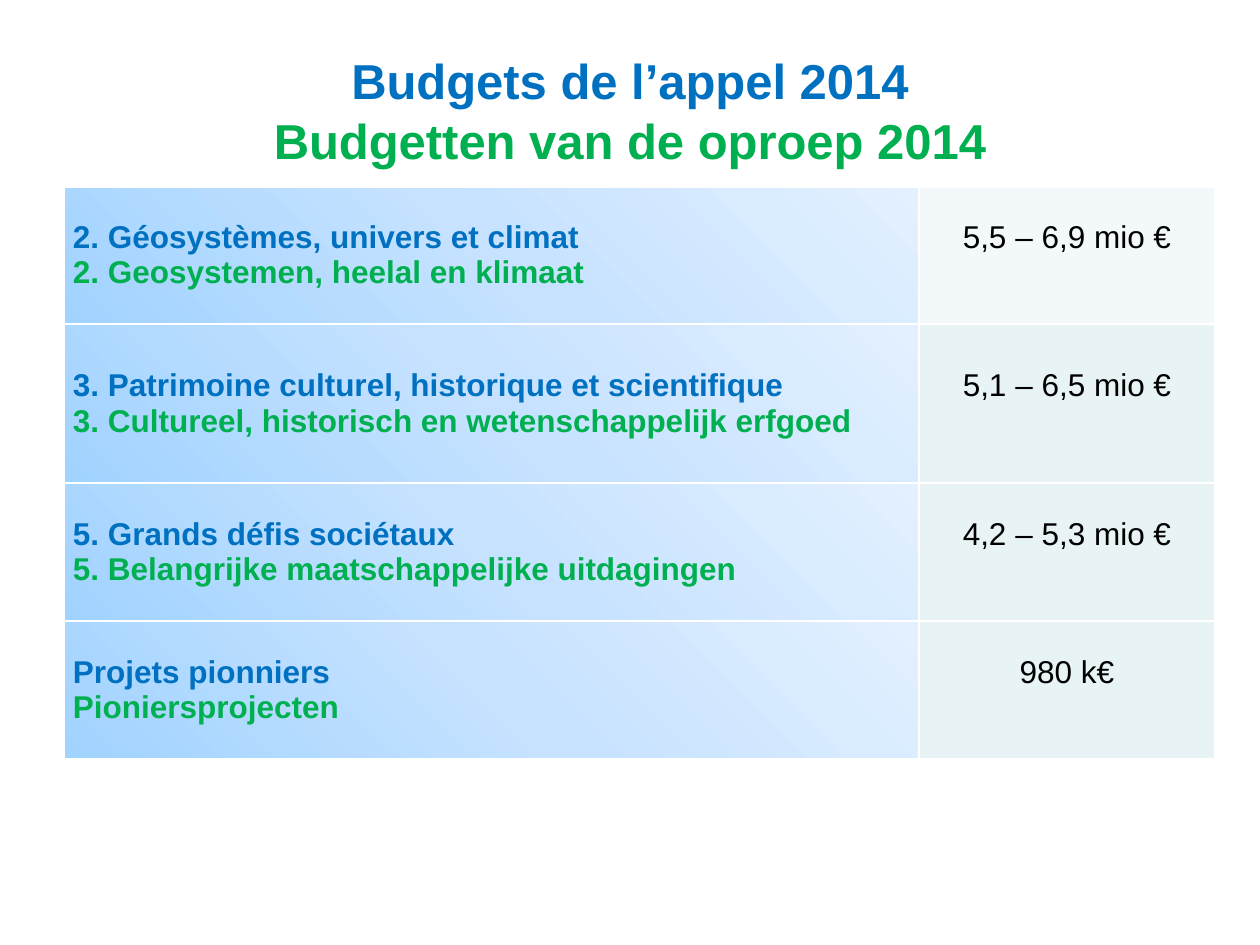
from copy import deepcopy

from lxml.etree import SubElement
from pptx import Presentation
from pptx.dml.color import RGBColor
from pptx.enum.text import MSO_ANCHOR, PP_ALIGN
from pptx.oxml.ns import qn
from pptx.util import Emu, Pt

COLORS = {
    "french": "0070C0", "dutch": "00B050", "amount": "000000",
    "border": "FFFFFF", "first_amount": "F3F9FA", "other_amount": "E7F3F4",
}
THEME_GRADIENT = [(0, "A1D3FF"), (0.5, "C6E2FF"), (1, "E3F0FF")]
BUDGETS = [
    ("2. Géosystèmes, univers et climat",
     "2. Geosystemen, heelal en klimaat", "5,5 – 6,9 mio €"),
    ("3. Patrimoine culturel, historique et scientifique",
     "3. Cultureel, historisch en wetenschappelijk erfgoed", "5,1 – 6,5 mio €"),
    ("5. Grands défis sociétaux",
     "5. Belangrijke maatschappelijke uitdagingen", "4,2 – 5,3 mio €"),
    ("Projets pionniers", "Pioniersprojecten", "980 k€"),
]
LINE_HEIGHT = 35


def px(length):
    return Emu(round(length * 914400 / 126))


def write(frame, lines, size=18, bold=True, align=PP_ALIGN.LEFT, gap=0):
    """Write (text, colour name) pairs as one paragraph each."""
    for index, (text, color) in enumerate(lines):
        para = frame.paragraphs[0] if index == 0 else frame.add_paragraph()
        para.alignment = align
        if index and gap:
            para.space_before = Pt(gap)
        span = para.add_run()
        span.text = text
        span.font.name = "Arial"
        span.font.size = Pt(size)
        span.font.bold = bold
        span.font.color.rgb = RGBColor.from_string(COLORS[color])


def add_title(page, left, top, width, height):
    box = page.shapes.add_textbox(px(left), px(top), px(width), px(height))
    frame = box.text_frame
    frame.word_wrap = True
    frame.vertical_anchor = MSO_ANCHOR.TOP
    frame.margin_top = px(12)
    write(frame, [("Budgets de l’appel 2014", "french"),
                  ("Budgetten van de oproep 2014", "dutch")],
          size=28, align=PP_ALIGN.CENTER, gap=1)


def add_borders(cell, top_width):
    """Add the border lines; call before the fill, which must follow them."""
    properties = cell._tc.get_or_add_tcPr()
    for side, width in (("L", 1), ("R", 1), ("T", top_width), ("B", 1)):
        line = SubElement(properties, qn(f"a:ln{side}"), w=str(Pt(width)))
        fill = SubElement(line, qn("a:solidFill"))
        SubElement(fill, qn("a:srgbClr"), val=COLORS["border"])


def fill_gradient(cell):
    cell.fill.gradient()
    cell.fill.gradient_angle = 45
    stop_list = cell._tc.tcPr.find(".//" + qn("a:gsLst"))
    stop_list.append(deepcopy(stop_list[-1]))
    for stop, (position, color) in zip(cell.fill.gradient_stops, THEME_GRADIENT):
        stop.position = position
        stop.color.rgb = RGBColor.from_string(color)


def add_budget_table(page, left, top, widths, heights):
    table = page.shapes.add_table(
        len(heights), len(widths), px(left), px(top),
        px(sum(widths)), px(sum(heights))).table
    table.first_row = table.horz_banding = False
    for column, width in zip(table.columns, widths):
        column.width = px(width)
    for index, (height, (french, dutch, amount)) in enumerate(zip(heights, BUDGETS)):
        row = table.rows[index]
        row.height = px(height)
        theme_cell, amount_cell = row.cells
        for cell in (theme_cell, amount_cell):
            cell.vertical_anchor = MSO_ANCHOR.MIDDLE
            cell.margin_left = cell.margin_right = px(9)
            cell.margin_top = cell.margin_bottom = 0
            add_borders(cell, top_width=1 if index else 3)
        fill_gradient(theme_cell)
        write(theme_cell.text_frame, [(french, "french"), (dutch, "dutch")])
        # The amount lines up with the French line
        amount_cell.margin_bottom = px(LINE_HEIGHT)
        amount_cell.fill.solid()
        amount_cell.fill.fore_color.rgb = RGBColor.from_string(
            COLORS["other_amount" if index else "first_amount"])
        write(amount_cell.text_frame, [(amount, "amount")],
              bold=False, align=PP_ALIGN.CENTER)


def main():
    deck = Presentation()
    deck.slide_width, deck.slide_height = px(1260), px(945)
    page = deck.slides.add_slide(deck.slide_layouts[6])
    add_title(page, 63, 38, 1134, 157)
    add_budget_table(page, 64, 186, widths=[855, 296], heights=[138, 159, 138, 138])
    deck.save("out.pptx")


if __name__ == "__main__":
    main()
